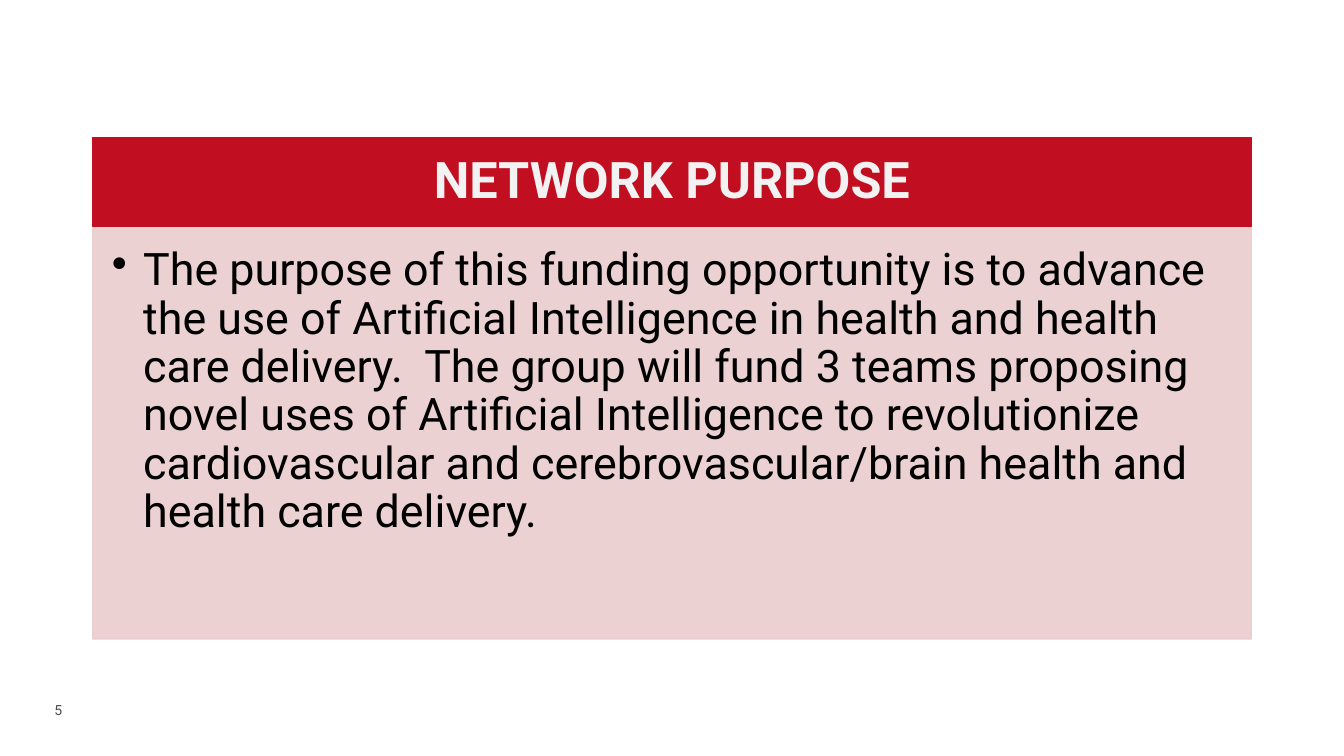
from lxml import etree
from pptx import Presentation
from pptx.dml.color import RGBColor
from pptx.enum import shapes, text
from pptx.oxml import ns
from pptx.util import Inches, Pt

RED = RGBColor(0xC1, 0x0E, 0x20)
PINK = RGBColor(0xE9, 0xCC, 0xCD)
OFF_WHITE = RGBColor(0xF2, 0xF2, 0xF2)
BLACK = RGBColor(0, 0, 0)
GREY = RGBColor(0x4D, 0x4D, 0x4F)

LEFT, WIDTH = 0.92, 11.49
PURPOSE = (
    "The purpose of this funding opportunity is to advance the use of "
    "Artificial Intelligence in health and health care delivery.  The group will "
    "fund 3 teams proposing novel uses of Artificial Intelligence to "
    "revolutionize cardiovascular and cerebrovascular/brain health and health "
    "care delivery."
)


def add_panel(top, height, color, anchor, insets):
    panel = slide.shapes.add_shape(
        shapes.MSO_SHAPE.RECTANGLE,
        Inches(LEFT), Inches(top), Inches(WIDTH), Inches(height))
    panel.shadow.inherit = False
    panel.fill.solid()
    panel.fill.fore_color.rgb = color
    panel.line.color.rgb = color
    panel.line.width = Pt(1)
    frame = panel.text_frame
    frame.word_wrap = True
    frame.vertical_anchor = anchor
    (frame.margin_left, frame.margin_top,
     frame.margin_right, frame.margin_bottom) = map(Inches, insets)
    return panel


def write(paragraph, words, size, color, align, bold=False):
    paragraph.alignment = align
    run = paragraph.add_run()
    run.text = words
    run.font.name = "Roboto"
    run.font.size = Pt(size)
    run.font.bold = bold
    run.font.color.rgb = color


deck = Presentation()
deck.slide_width, deck.slide_height = Inches(13.33), Inches(7.5)
slide = deck.slides.add_slide(deck.slide_layouts[6])

page_number = slide.shapes.add_textbox(
    Inches(0.44), Inches(6.91), Inches(0.39), Inches(0.27))
write(page_number.text_frame.paragraphs[0], "5", 10, GREY, text.PP_ALIGN.LEFT)

heading = add_panel(1.37, 0.88, RED, text.MSO_ANCHOR.MIDDLE,
                    (0.28, 0.16, 0.28, 0.16))
heading_line = heading.text_frame.paragraphs[0]
heading_line.line_spacing = 0.9
write(heading_line, "NETWORK PURPOSE", 36, OFF_WHITE, text.PP_ALIGN.CENTER, True)

body = add_panel(2.26, 4.08, PINK, text.MSO_ANCHOR.TOP,
                 (0.19, 0.19, 0.25, 0.28))
for color_element in body._element.spPr.iter(ns.qn("a:srgbClr")):
    etree.SubElement(color_element, ns.qn("a:alpha"), val="90000")

purpose_line = body.text_frame.paragraphs[0]
indents = purpose_line._p.get_or_add_pPr()
indents.set("marL", str(Inches(0.31)))
indents.set("indent", str(Inches(-0.31)))
etree.SubElement(indents, ns.qn("a:buChar"), char="•")
purpose_line.line_spacing = 0.9
write(purpose_line, PURPOSE, 32, BLACK, text.PP_ALIGN.LEFT)

deck.save("out.pptx")
